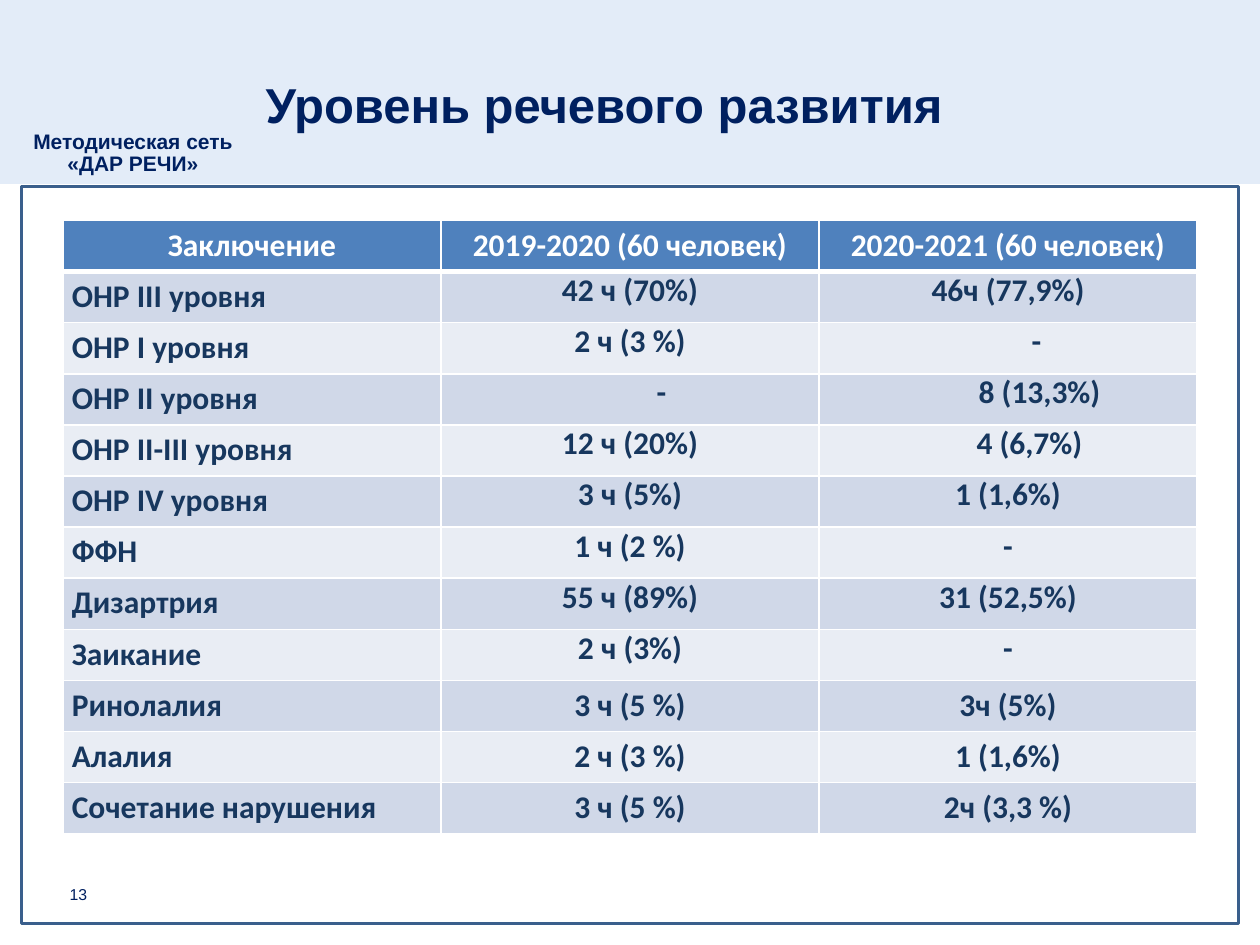
from lxml import etree
from pptx import Presentation
from pptx.dml.color import RGBColor
from pptx.enum.shapes import MSO_SHAPE
from pptx.enum.text import MSO_ANCHOR, PP_ALIGN
from pptx.oxml.ns import qn
from pptx.util import Inches, Pt

RECTANGLE = MSO_SHAPE.RECTANGLE
LEFT, CENTER, RIGHT = PP_ALIGN.LEFT, PP_ALIGN.CENTER, PP_ALIGN.RIGHT
MIDDLE, BOTTOM = MSO_ANCHOR.MIDDLE, MSO_ANCHOR.BOTTOM

# Content
TITLE = "Уровень речевого развития"
NETWORK = ["Методическая сеть", "«ДАР РЕЧИ»"]
PAGE_NUMBER = "13"
HEADER = ("Заключение", "2019-2020 (60 человек)", "2020-2021 (60 человек)")
ROWS = [
    ("ОНР III уровня", "42 ч (70%)", "46ч (77,9%)"),
    ("ОНР I уровня", "2 ч (3 %)", "-"),
    ("ОНР II уровня", "-", "8 (13,3%)"),
    ("ОНР II-III уровня", "12 ч (20%)", "4 (6,7%)"),
    ("ОНР IV уровня", "3 ч (5%)", "1 (1,6%)"),
    ("ФФН", "1 ч (2 %)", "-"),
    ("Дизартрия", "55 ч (89%)", "31 (52,5%)"),
    ("Заикание", "2 ч (3%)", "-"),
    ("Ринолалия", "3 ч (5 %)", "3ч (5%)"),
    ("Алалия", "2 ч (3 %)", "1 (1,6%)"),
    ("Сочетание нарушения", "3 ч (5 %)", "2ч (3,3 %)"),
]
INDENTS = {(2, 2): 0.45, (3, 1): 0.5, (3, 2): 0.5, (4, 2): 0.34}  # (row, column): inches
FIRST_LOOSE_ROW = 9  # from here on the values are spaced like the labels

THEME = {
    "heading_font": "Arial", "table_font": "Calibri",
    "title_size": 28, "network_size": 12, "number_size": 9, "table_size": 18,
    "navy": "002060", "band": "C6D9F1", "frame": "3A5F8C", "white": "FFFFFF",
    "header_fill": "4F81BD", "odd_fill": "D0D8E8", "even_fill": "E9EDF4",
    "table_text": "17375E",
}


def color(name):
    return RGBColor.from_string(THEME[name])


def style(para, font, size, tint, bold, align, spacing=None):
    para.alignment = align
    if spacing:
        para.line_spacing = spacing
    for span in para.runs:
        span.font.name = THEME[font]
        span.font.size = Pt(THEME[size])
        span.font.color.rgb = color(tint)
        span.font.bold = bold


def add_rectangle(page, left, top, width, height):
    shape = page.shapes.add_shape(
        RECTANGLE, Inches(left), Inches(top), Inches(width), Inches(height))
    shape.shadow.inherit = False
    return shape


def add_text(page, place, lines, size, bold, align, anchor, spacings):
    box = page.shapes.add_textbox(*map(Inches, place))
    frame = box.text_frame
    frame.word_wrap = True
    frame.vertical_anchor = anchor
    frame.text = "\n".join(lines)
    for para, spacing in zip(frame.paragraphs, spacings):
        style(para, "heading_font", size, "navy", bold, align, spacing)
    return box


def add_borders(cell, bottom_width):
    properties = cell._tc.get_or_add_tcPr()
    for tag, width in (("a:lnL", 1), ("a:lnR", 1), ("a:lnT", 1), ("a:lnB", bottom_width)):
        line = etree.SubElement(properties, qn(tag), w=str(Pt(width)))
        fill = etree.SubElement(line, qn("a:solidFill"))
        etree.SubElement(fill, qn("a:srgbClr"), val=THEME["white"])


def add_results(page):
    grid = [HEADER, *ROWS]
    table = page.shapes.add_table(
        len(grid), len(HEADER), Inches(0.5), Inches(1.75), Inches(9), Inches(4.87)).table
    for row, values in enumerate(grid):
        for column, value in enumerate(values):
            cell = table.cell(row, column)
            cell.margin_left = cell.margin_right = Inches(0.07)
            cell.margin_top = cell.margin_bottom = 0
            add_borders(cell, 3 if row == 0 else 1)
            fill = "header_fill" if row == 0 else "odd_fill" if row % 2 else "even_fill"
            cell.fill.solid()
            cell.fill.fore_color.rgb = color(fill)
            cell.text_frame.text = value
            para = cell.text_frame.paragraphs[0]
            loose = row == 0 or column == 0 or row >= FIRST_LOOSE_ROW
            style(para, "table_font", "table_size", "table_text" if row else "white", True,
                  LEFT if row and column == 0 else CENTER, 1.15 if loose else 1.0)
            if (row, column) in INDENTS:
                para_properties = para._p.get_or_add_pPr()
                para_properties.set("marL", str(Inches(INDENTS[row, column])))
                para_properties.set("indent", "0")


def main():
    deck = Presentation()
    deck.slide_width, deck.slide_height = Inches(10), Inches(7.5)
    page = deck.slides.add_slide(deck.slide_layouts[6])

    # Translucent header band
    band = add_rectangle(page, -0.04, 0, 10.06, 1.46)
    band.fill.solid()
    band.fill.fore_color.rgb = color("band")
    band.line.fill.background()
    tint = band.fill._xPr.find(qn("a:solidFill"))[0]
    etree.SubElement(tint, qn("a:alpha"), val="49000")

    # Network name
    network = add_text(page, (0.16, 0.92, 1.85, 0.53), NETWORK, "network_size",
                       True, CENTER, BOTTOM, (1.04, 0.9))
    network.text_frame.margin_left = Inches(0.04)

    # Content frame
    frame = add_rectangle(page, 0.17, 1.48, 9.66, 5.85)
    frame.fill.background()
    frame.line.color.rgb = color("frame")
    frame.line.width = Pt(2)

    # Title, table and page number
    title = add_text(page, (2.01, 0.18, 7.84, 1.25), [TITLE], "title_size",
                     True, LEFT, MIDDLE, (1.07,))
    title.text_frame.paragraphs[0].space_after = Pt(8)
    add_results(page)
    add_text(page, (0.2, 6.9, 0.59, 0.4), [PAGE_NUMBER], "number_size",
             False, RIGHT, MIDDLE, (None,))

    deck.save("out.pptx")


if __name__ == "__main__":
    main()
